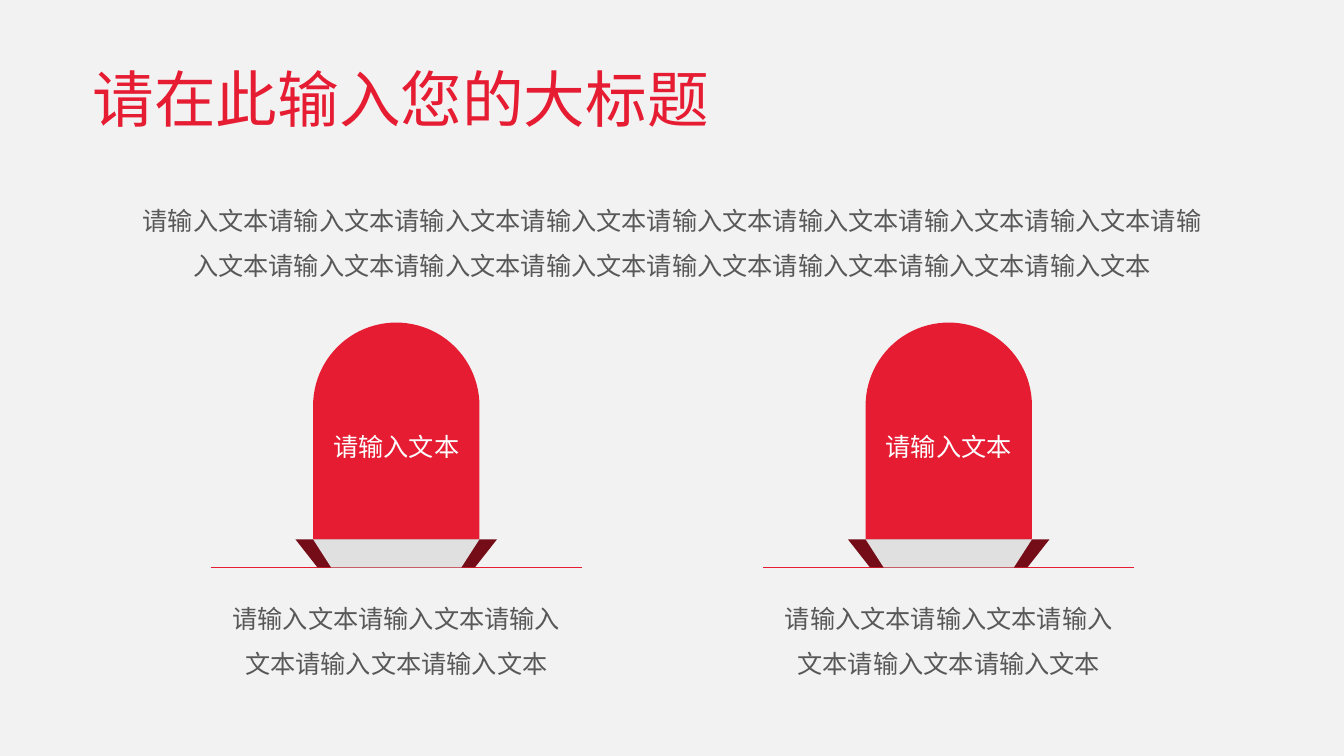
from dataclasses import dataclass

from lxml.etree import SubElement
from pptx import Presentation
from pptx.dml.color import RGBColor
from pptx.enum.shapes import MSO_CONNECTOR, MSO_SHAPE
from pptx.enum.text import MSO_ANCHOR, PP_ALIGN
from pptx.oxml.ns import qn
from pptx.util import Inches, Pt


@dataclass(frozen=True)
class Theme:
    font: str = "Noto Sans CJK SC"
    background: str = "F2F2F2"
    red: str = "E61C32"
    dark_red: str = "740D18"
    gray: str = "E0E0E0"
    body: str = "585858"
    white: str = "FEFFFF"
    title_size: int = 44
    body_size: int = 18
    line_width: float = 0.5


THEME = Theme()
PHRASE = "请输入文本"


def color(value):
    return RGBColor.from_string(value)


def write(shape, text, size, ink, spacing, align=PP_ALIGN.CENTER,
          anchor=MSO_ANCHOR.MIDDLE, wrap=True):
    """Put one formatted run into a shape."""
    frame = shape.text_frame
    frame.word_wrap = wrap
    frame.vertical_anchor = anchor
    paragraph = frame.paragraphs[0]
    paragraph.alignment = align
    paragraph.line_spacing = spacing
    run = paragraph.add_run()
    run.text = text
    run.font.size = Pt(size)
    run.font.name = THEME.font
    run.font.color.rgb = color(ink)
    properties = run.font._element
    SubElement(properties, qn("a:ea")).set("typeface", THEME.font)


def add_text(slide, box, text, size, ink, spacing, **options):
    shape = slide.shapes.add_textbox(*map(Inches, box))
    write(shape, text, size, ink, spacing, **options)


def paint(shape, fill):
    shape.shadow.inherit = False
    shape.fill.solid()
    shape.fill.fore_color.rgb = color(fill)
    shape.line.fill.background()


def add_tray(slide, left, top, width, height, inset, fill):
    """Trapezoid that narrows by the inset on both sides at its foot."""
    right, bottom = left + width, top + height
    corners = [(left, top), (right, top), (right - inset, bottom), (left + inset, bottom)]
    points = [(Inches(x), Inches(y)) for x, y in corners]
    builder = slide.shapes.build_freeform(*points[0])
    builder.add_line_segments(points[1:], close=True)
    paint(builder.convert_to_shape(), fill)


def add_ground_line(slide, left, y, width):
    line = slide.shapes.add_connector(
        MSO_CONNECTOR.STRAIGHT, Inches(left), Inches(y), Inches(left + width), Inches(y))
    line.line.color.rgb = color(THEME.red)
    line.line.width = Pt(THEME.line_width)
    SubElement(line._element.spPr, qn("a:effectLst"))


def add_dome(slide, left, top, width, height):
    dome = slide.shapes.add_shape(
        MSO_SHAPE.ROUND_2_SAME_RECTANGLE, *map(Inches, (left, top, width, height)))
    dome.adjustments[0] = 0.5
    paint(dome, THEME.red)
    frame = dome.text_frame
    frame.margin_left = frame.margin_right = frame.margin_top = Inches(0.04)
    frame.margin_bottom = 0
    write(dome, PHRASE, THEME.body_size, THEME.white, 1.1, wrap=False)


def add_column(slide, left, top, width):
    """Dome on a folded base, with a ground line and a caption below."""
    dome_width, dome_height = 1.65, 2.15
    fold_width, fold_height = 2, 0.28
    center = left + width / 2
    fold_top = top + dome_height
    ground = fold_top + fold_height
    dome_left = center - dome_width / 2

    add_ground_line(slide, left, ground, width)
    add_tray(slide, center - fold_width / 2, fold_top, fold_width, fold_height,
             0.22, THEME.dark_red)
    add_dome(slide, dome_left, top, dome_width, dome_height)
    add_tray(slide, dome_left, fold_top, dome_width, fold_height, 0.18, THEME.gray)
    add_text(slide, (left, ground + 0.04, width, 1.23), PHRASE * 5,
             THEME.body_size, THEME.body, 1.5)


def add_heading(slide, left, top, width):
    """Title with the introduction below it."""
    add_text(slide, (left, top, width, 1.22), "请在此输入您的大标题",
             THEME.title_size, THEME.red, 0.9,
             align=PP_ALIGN.LEFT, anchor=MSO_ANCHOR.BOTTOM)
    add_text(slide, (left + 0.42, top + 1.64, 10.85, 1.03), PHRASE * 16,
             THEME.body_size, THEME.body, 1.5)


def main():
    presentation = Presentation()
    presentation.slide_width = Inches(13.33)
    presentation.slide_height = Inches(7.5)
    slide = presentation.slides.add_slide(presentation.slide_layouts[6])

    # Background
    fill = slide.background.fill
    fill.solid()
    fill.fore_color.rgb = color(THEME.background)

    # Heading and the two columns
    add_heading(slide, 0.82, 0.18, 11.81)
    for left in (2.09, 7.57):
        add_column(slide, left, 3.2, 3.68)

    presentation.save("out.pptx")


if __name__ == "__main__":
    main()
